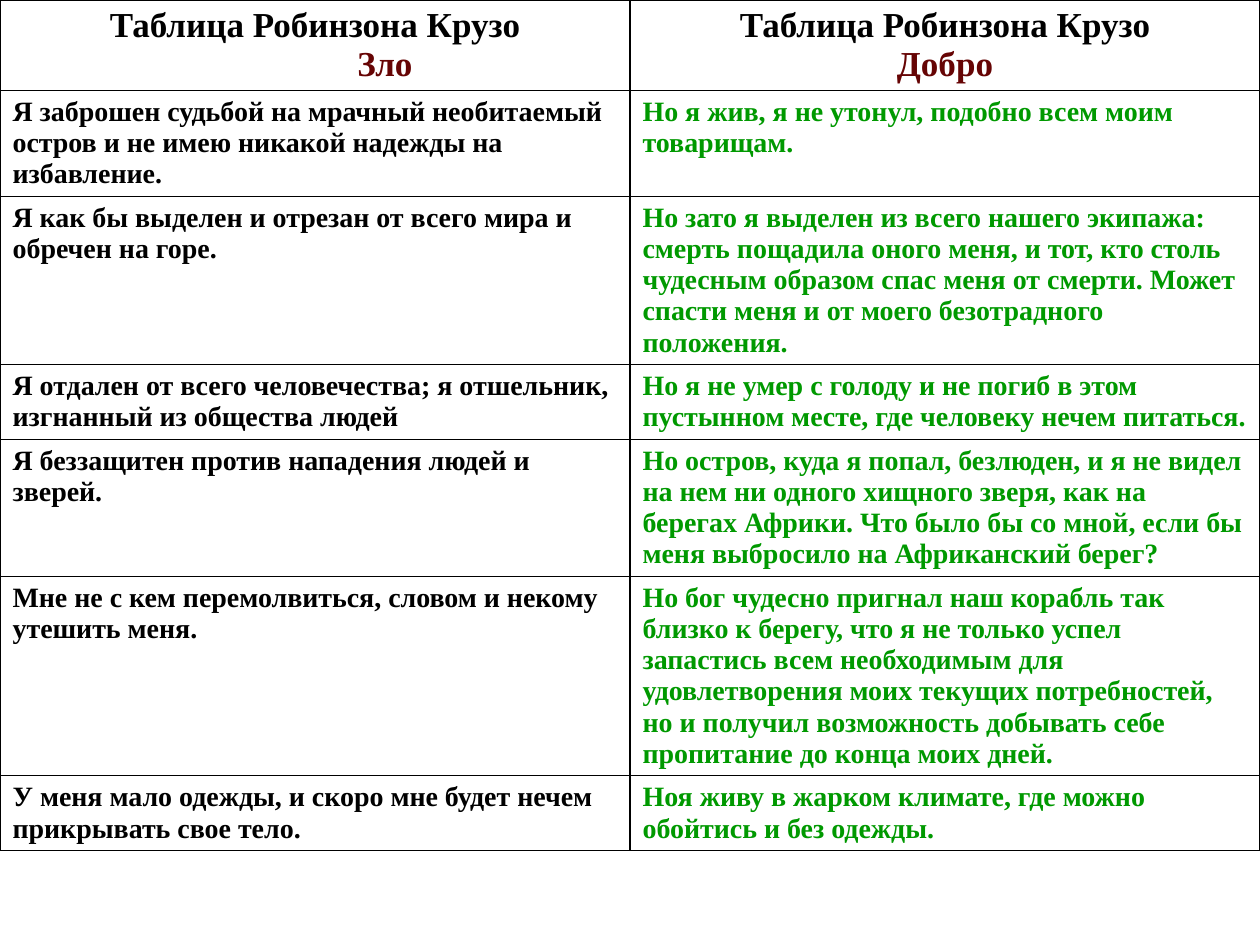
import pptx
import pptx.dml.color
import pptx.enum.text
import pptx.oxml
import pptx.oxml.ns
import pptx.util

Cm = pptx.util.Cm
Pt = pptx.util.Pt

COLORS = {"paper": "FFFFFF", "line": "000000", "evil": "000000",
          "good": "009900", "heading": "660404"}
HEADING = "Таблица Робинзона Крузо"
EVIL_INDENT = Cm(2.82)
ROW_HEIGHTS = [1.12, 1.12, 1.98, 1.12, 1.98, 2.41, 1.12]
ROWS = [
    ("Я заброшен судьбой на мрачный необитаемый остров и не имею никакой надежды на избавление.",
     "Но я жив, я не утонул, подобно всем моим товарищам."),
    ("Я как бы выделен и отрезан от всего мира и обречен на горе.",
     "Но зато я выделен из всего нашего экипажа: смерть пощадила оного меня, и тот, "
     "кто столь чудесным образом спас меня от смерти. Может спасти меня и от моего "
     "безотрадного положения."),
    ("Я отдален от всего человечества; я отшельник, изгнанный из общества людей",
     "Но я не умер с голоду и не погиб в этом пустынном месте, где человеку нечем питаться."),
    ("Я беззащитен против нападения людей и зверей.",
     "Но остров, куда я попал, безлюден, и я не видел на нем ни одного хищного зверя, "
     "как на берегах Африки. Что было бы со мной, если бы меня выбросило на Африканский берег?"),
    ("Мне не с кем перемолвиться, словом и некому утешить меня.",
     "Но бог чудесно пригнал наш корабль так близко к берегу, что я не только успел "
     "запастись всем необходимым для удовлетворения моих текущих потребностей, но и "
     "получил возможность добывать себе пропитание до конца моих дней."),
    ("У меня мало одежды, и скоро мне будет нечем прикрывать свое тело.",
     "Ноя живу в жарком климате, где можно обойтись и без одежды."),
]


def rgb(name):
    return pptx.dml.color.RGBColor.from_string(COLORS[name])


def write_paragraph(paragraph, text, size, color):
    run = paragraph.add_run()
    run.text = text
    formats = {"name": "Times New Roman", "size": Pt(size), "bold": True}
    for attribute, value in formats.items():
        setattr(run.font, attribute, value)
    run.font.color.rgb = rgb(color)


def write_heading(cell, word, indent):
    """Center the table name and, below it, the column word."""
    first = cell.text_frame.paragraphs[0]
    second = cell.text_frame.add_paragraph()
    write_paragraph(first, HEADING, 20, "evil")
    write_paragraph(second, word, 20, "heading")
    for paragraph in (first, second):
        paragraph.alignment = pptx.enum.text.PP_ALIGN.CENTER
    if indent:
        second._p.get_or_add_pPr().set("marL", str(indent))


def style_cell(cell):
    """Add borders on all four sides, then the fill that must follow them."""
    properties = cell._tc.get_or_add_tcPr()
    for side in ("lnL", "lnR", "lnT", "lnB"):
        properties.append(pptx.oxml.parse_xml(
            f'<a:{side} {pptx.oxml.ns.nsdecls("a")} w="{Pt(0.75)}"><a:solidFill>'
            f'<a:srgbClr val="{COLORS["line"]}"/></a:solidFill></a:{side}>'))
    cell.fill.solid()
    cell.fill.fore_color.rgb = rgb("paper")


def add_comparison_table(slide, left, top, width, height):
    frame = slide.shapes.add_table(len(ROW_HEIGHTS), 2, left, top, width, height)
    table = frame.table
    for row, row_height in zip(table.rows, ROW_HEIGHTS):
        row.height = Cm(row_height)
    frame.height = height

    write_heading(table.cell(0, 0), "Зло", EVIL_INDENT)
    write_heading(table.cell(0, 1), "Добро", 0)
    for row_index, texts in enumerate(ROWS, start=1):
        for column, (text, color) in enumerate(zip(texts, ("evil", "good"))):
            paragraph = table.cell(row_index, column).text_frame.paragraphs[0]
            write_paragraph(paragraph, text, 16, color)
    for cell in table.iter_cells():
        style_cell(cell)


def main():
    presentation = pptx.Presentation()
    presentation.slide_width = Cm(25.4)
    presentation.slide_height = Cm(19.05)
    slide = presentation.slides.add_slide(presentation.slide_layouts.get_by_name("Blank"))
    add_comparison_table(slide, 0, 0, presentation.slide_width, presentation.slide_height)
    presentation.save("out.pptx")


if __name__ == "__main__":
    main()
